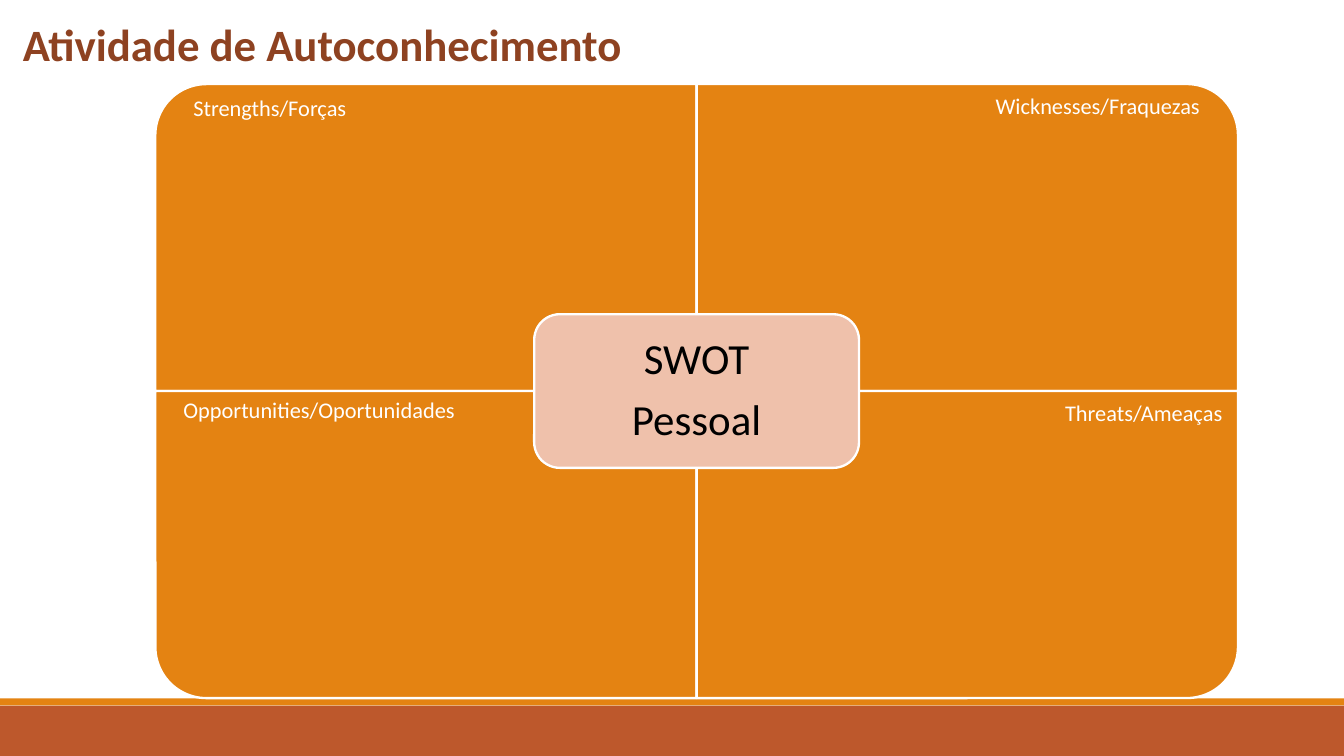
"""Build a personal SWOT slide with four rounded quadrants and a centre label."""
from pptx import Presentation
from pptx.dml.color import RGBColor
from pptx.enum.shapes import MSO_SHAPE
from pptx.enum.text import MSO_ANCHOR, PP_ALIGN
from pptx.util import Pt

RECT, ROUND, ROUND1 = MSO_SHAPE.RECTANGLE, MSO_SHAPE.ROUNDED_RECTANGLE, MSO_SHAPE.ROUND_1_RECTANGLE
MIDDLE, LEFT, CENTER = MSO_ANCHOR.MIDDLE, PP_ALIGN.LEFT, PP_ALIGN.CENTER
ORANGE, RUST, BROWN, PEACH = "E48312", "BD582C", "8E4221", "EFC1AB"
WHITE, BLACK = "FFFFFF", "000000"


def add_box(kind, x, y, w, h, fill, line=None):
    sp = s.shapes.add_shape(kind, Pt(x), Pt(y), Pt(w), Pt(h))
    sp.shadow.inherit = False
    sp.fill.solid()
    sp.fill.fore_color.rgb = RGBColor.from_string(fill)
    if line:
        sp.line.color.rgb = RGBColor.from_string(line)
        sp.line.width = Pt(1.25)
    else:
        sp.line.fill.background()
    return sp


def style(p, size, color, align=LEFT, bold=False):
    p.alignment = align
    p.font.name = "Calibri"
    p.font.size = Pt(size)
    p.font.bold = bold
    p.font.color.rgb = RGBColor.from_string(color)


prs = Presentation()
prs.slide_width, prs.slide_height = Pt(720), Pt(405)
s = prs.slides.add_slide(prs.slide_layouts[5])

add_box(RECT, 0, 378, 720, 27, RUST)
add_box(RECT, 0, 374.2, 720, 3.8, ORANGE)

title = s.shapes.title
title.left, title.top, title.width, title.height = Pt(5), Pt(5.5), Pt(336), Pt(36)
tf = title.text_frame
tf.text = "Atividade de Autoconhecimento"
tf.word_wrap = False
tf.vertical_anchor = MIDDLE
style(tf.paragraphs[0], 24, BROWN, bold=True)

cx, cy, qw, qh = 373.2, 209.5, 290, 164.5
for col, row, angle in [(-1, -1, 270), (1, -1, 0), (-1, 1, 180), (1, 1, 90)]:
    w, h = (qh, qw) if angle in (90, 270) else (qw, qh)
    x, y = cx + col * qw / 2 - w / 2, cy + row * qh / 2 - h / 2
    sp = add_box(ROUND1, x, y, w, h, ORANGE, WHITE)
    sp.rotation = angle

w, h = 174, 82.3
sp = add_box(ROUND, cx - w / 2, cy - h / 2, w, h, PEACH, WHITE)
tf = sp.text_frame
tf.text = "SWOT\nPessoal"
tf.vertical_anchor = MIDDLE
for p in tf.paragraphs:
    style(p, 23, BLACK, CENTER)
    p.line_spacing = 0.9
    p.space_after = Pt(8)

labels = [
    ("Strengths/Forças", 96.5, 46.8, 97.2),
    ("Wicknesses/Fraquezas", 526.3, 46.1, 125.3),
    ("Opportunities/Oportunidades", 91.2, 208.8, 161.3),
    ("Threats/Ameaças", 563.5, 210.2, 100),
]
for text, x, y, w in labels:
    tf = s.shapes.add_textbox(Pt(x), Pt(y), Pt(w), Pt(21.6)).text_frame
    tf.text = text
    tf.word_wrap = False
    style(tf.paragraphs[0], 12, WHITE)

prs.save("out.pptx")
